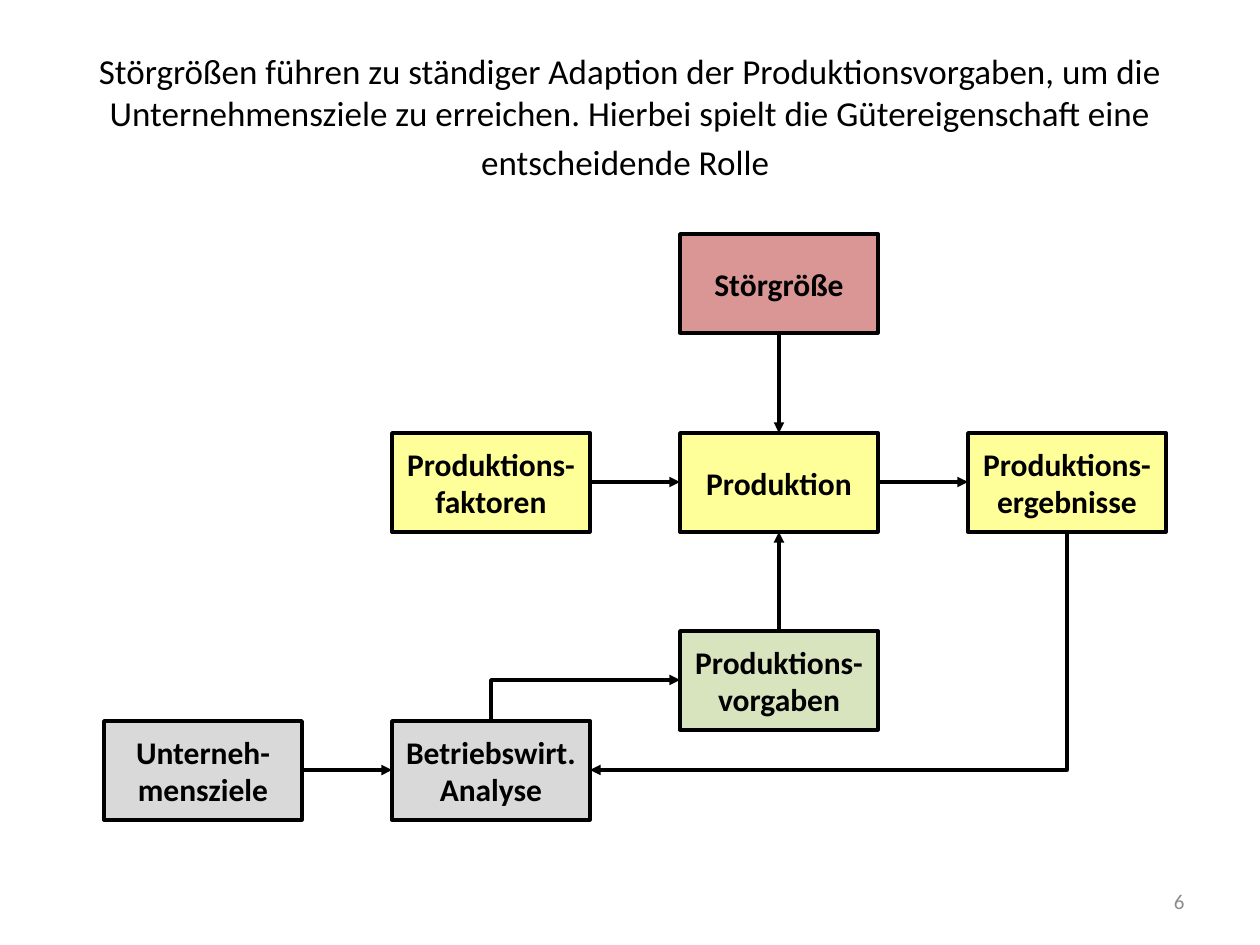
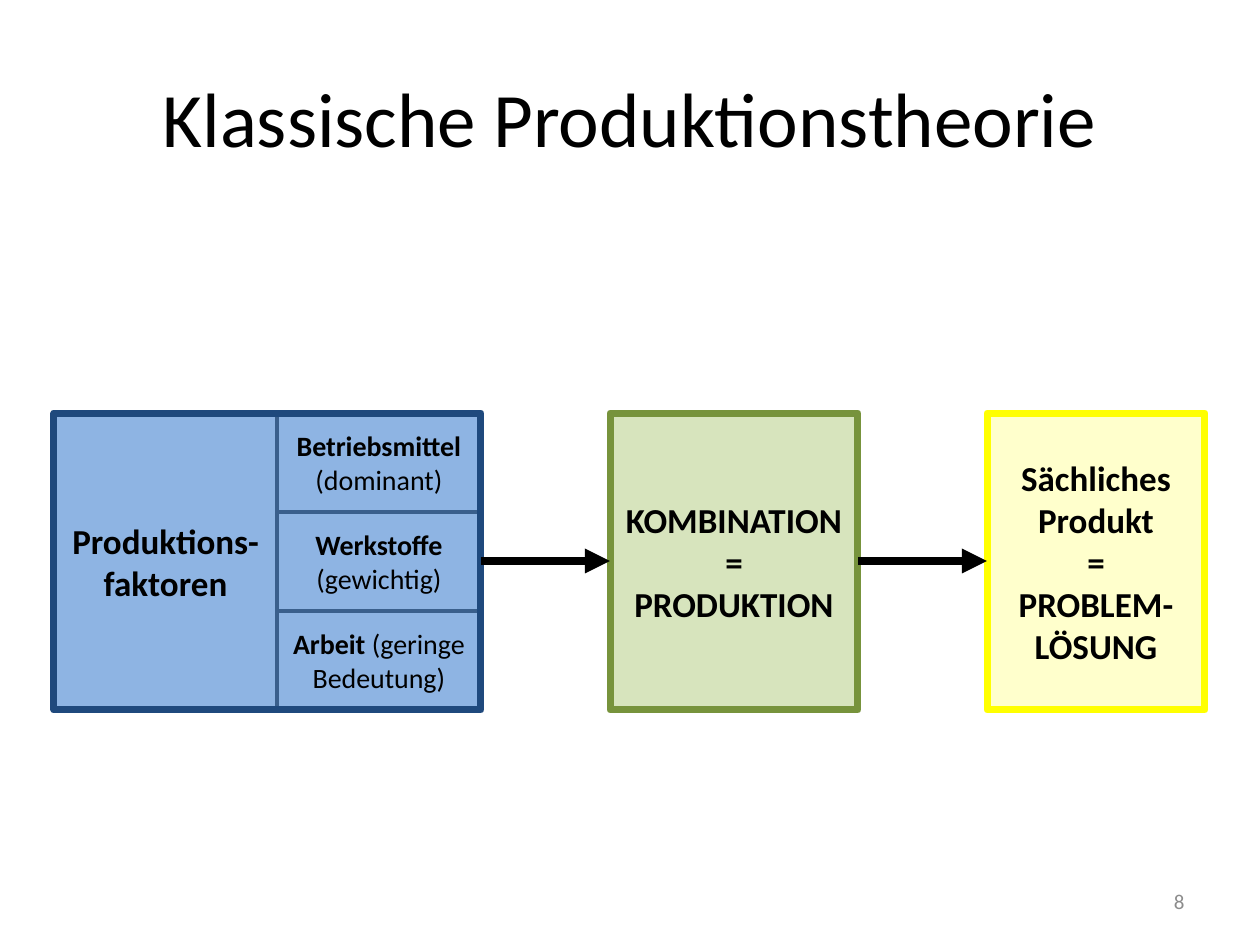
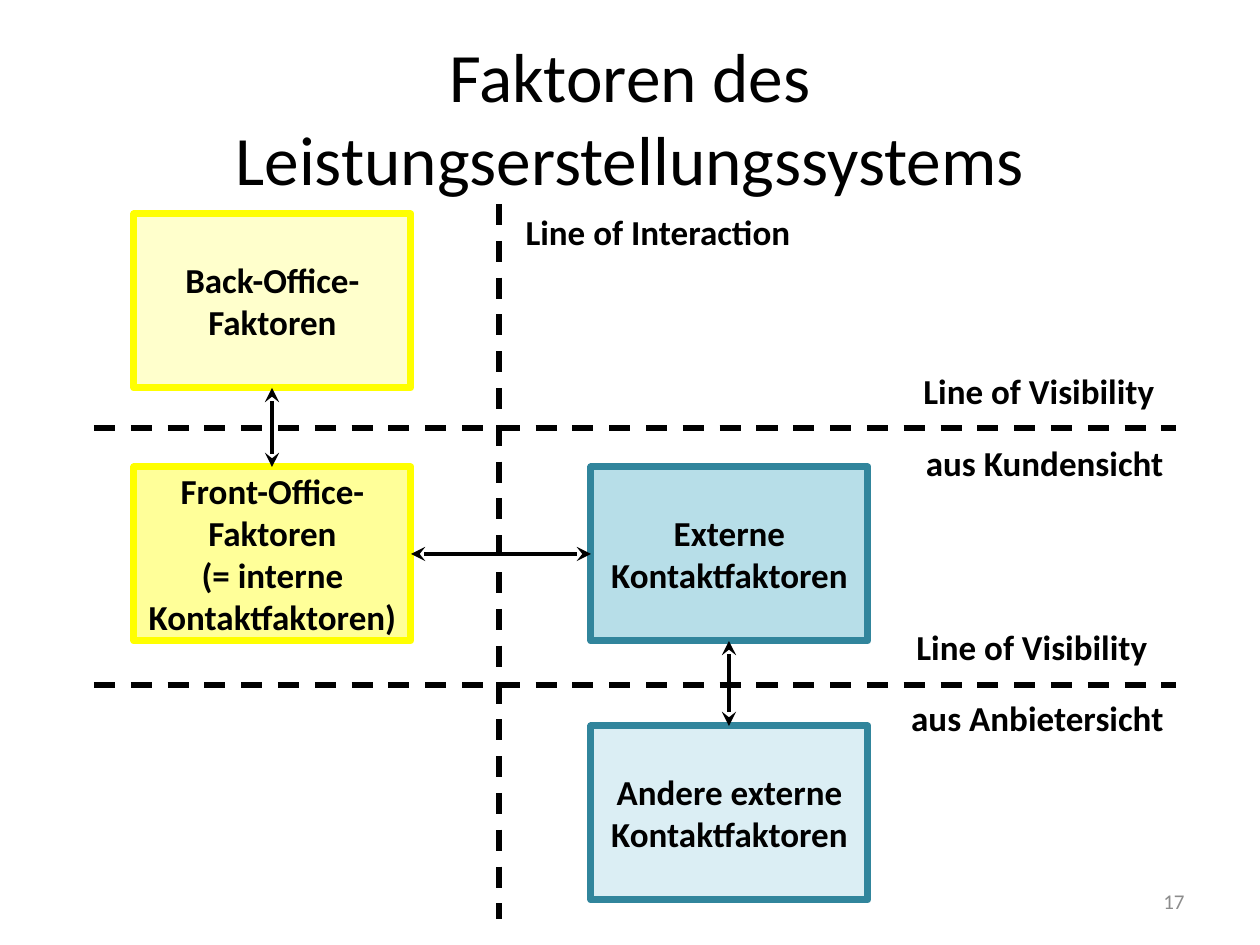
from typing import NamedTuple

from lxml.etree import SubElement
from pptx import Presentation
from pptx.dml.color import RGBColor
from pptx.enum.dml import MSO_LINE_DASH_STYLE as Dash
from pptx.enum.shapes import MSO_CONNECTOR as Link, MSO_SHAPE as Preset
from pptx.enum.text import MSO_ANCHOR as Anchor, MSO_AUTO_SIZE as Fit, PP_ALIGN as Align
from pptx.oxml.ns import qn
from pptx.util import Emu, Pt

PX_PER_INCH = 126
FONT = "Calibri"
COLOURS = {
    "black": "000000", "number": "8C8C8C", "yellow": "FFFF99", "cream": "FFFFCC",
    "bright": "FFFF00", "green": "D7E4BD", "olive": "77933C", "grey": "D9D9D9",
    "rose": "D99694", "blue": "8EB4E3", "steel": "3A5F8C", "navy": "1F497D",
    "aqua": "B7DEE8", "ice": "DBEEF4", "teal": "31859C",
}


class Box(NamedTuple):
    """A rectangle in px."""
    left: int
    top: int
    width: int
    height: int

    @property
    def right(self):
        """Right edge."""
        return self.left + self.width

    @property
    def bottom(self):
        """Bottom edge."""
        return self.top + self.height

    @property
    def mid_x(self):
        """Horizontal centre."""
        return self.left + self.width // 2

    @property
    def mid_y(self):
        """Vertical centre."""
        return self.top + self.height // 2

    def inside(self, x, y, width, height):
        """Return a box placed relative to this one."""
        return Box(self.left + x, self.top + y, width, height)


PAGE = Box(0, 0, 1260, 945)
TITLE = Box(63, 38, 1134, 157)
NUMBER = Box(903, 876, 294, 50)


def px(length):
    """Turn px into EMU."""
    return Emu(round(length * 914400 / PX_PER_INCH))


def rgb(name):
    """Look up a colour by name."""
    return RGBColor.from_string(COLOURS[name])


def apply(target, values):
    """Set every attribute listed in the dict."""
    for key, value in values.items():
        setattr(target, key, value)


def write(shape, lines, size, bold=False, colour="black", align=Align.CENTER, **frame):
    """Fill a shape with lines, each a string or a list of (text, font values) runs."""
    text = shape.text_frame
    apply(text, {"word_wrap": True, "vertical_anchor": Anchor.MIDDLE, **frame})
    for index, line in enumerate(lines):
        paragraph = text.add_paragraph() if index else text.paragraphs[0]
        paragraph.alignment = align
        for words, changes in [(line, {})] if isinstance(line, str) else line:
            run = paragraph.add_run()
            run.text = words
            apply(run.font, {"name": FONT, "size": Pt(size), "bold": bold, **changes})
            run.font.color.rgb = rgb(colour)
    return text


def text_area(slide, box):
    """Add an empty text box."""
    return slide.shapes.add_textbox(*map(px, box))


def node(slide, box, lines, fill, line, weight, size=20):
    """Draw a labelled rectangle and return its box."""
    rectangle = slide.shapes.add_shape(Preset.RECTANGLE, *map(px, box))
    rectangle.shadow.inherit = False
    if fill:
        rectangle.fill.solid()
        rectangle.fill.fore_color.rgb = rgb(fill)
    else:
        rectangle.fill.background()
    rectangle.line.color.rgb = rgb(line)
    rectangle.line.width = Pt(weight)
    write(rectangle, lines, size, bold=True)
    return box


def connect(slide, start, end, weight, head=None, tail=None, dash=None, kind=Link.STRAIGHT):
    """Draw a black line with optional arrowheads and dashes."""
    connector = slide.shapes.add_connector(kind, *map(px, (*start, *end)))
    connector.line.color.rgb = rgb("black")
    apply(connector.line, {"width": Pt(weight), "dash_style": dash})
    properties = connector._element.spPr
    for tag, arrow in (("a:headEnd", head), ("a:tailEnd", tail)):
        if arrow:
            SubElement(properties.find(qn("a:ln")), qn(tag), type=arrow)
    SubElement(properties, qn("a:effectLst"))
    return connector


def connect_corner(slide, start, end, weight, tail):
    """Draw an arrow that runs vertically first, then horizontally."""
    (x1, y1), (x2, y2) = start, end
    mid_x, mid_y = (x1 + x2) / 2, (y1 + y2) / 2
    half_x, half_y = (x2 - x1) / 2, (y2 - y1) / 2
    corner = connect(slide, (mid_x - half_y, mid_y + half_x),
                     (mid_x + half_y, mid_y - half_x), weight, tail=tail, kind=Link.ELBOW)
    properties = corner._element.spPr
    properties.find(qn("a:prstGeom")).set("prst", "bentConnector2")
    properties.find(qn("a:xfrm")).set("rot", "5400000")


def new_slide(deck, title, size, number):
    """Add a blank slide with title and page number."""
    slide = deck.slides.add_slide(deck.slide_layouts[6])
    write(text_area(slide, TITLE), [title], size)
    write(text_area(slide, NUMBER), [str(number)], 12, colour="number", align=Align.RIGHT)
    return slide


def control_loop(slide, area):
    """Draw the production control loop."""
    def step(column, y, label, fill):
        return node(slide, area.inside(column * 288, y, 198, 99), [label], fill, "black", 2, 18)

    disturbance = step(2, 0, "Störgröße", "rose")
    factors = step(1, 199, "Produktions-faktoren", "yellow")
    production = step(2, 199, "Produktion", "yellow")
    results = step(3, 199, "Produktions-ergebnisse", "yellow")
    targets = step(2, 397, "Produktions-vorgaben", "green")
    goals = step(0, 487, "Unterneh-mensziele", "grey")
    analysis = step(1, 487, "Betriebswirt. Analyse", "grey")

    for source, target in ((factors, production), (production, results), (goals, analysis)):
        connect(slide, (source.right, source.mid_y), (target.left, target.mid_y), 2,
                tail="triangle")
    for start, end in ((disturbance.bottom, production.top), (targets.top, production.bottom)):
        connect(slide, (production.mid_x, start), (production.mid_x, end), 2, tail="triangle")
    connect_corner(slide, (results.mid_x, results.bottom),
                   (analysis.right, analysis.mid_y), 2, "triangle")
    connect_corner(slide, (analysis.mid_x, analysis.top),
                   (targets.left, targets.mid_y), 2, "triangle")


def factor_chain(slide, area):
    """Draw the chain from factors through combination to product."""
    plain = {"bold": False}
    node(slide, area.inside(0, 0, 223, area.height), ["Produktions-faktoren"], "blue", "steel", 2)
    kinds = (
        [[("Betriebsmittel", {}), (" (dominant)", plain)]],
        ["Werkstoffe", [("(gewichtig)", plain)]],
        [[("Arbeit", {}), (" (geringe Bedeutung)", plain)]],
    )
    height = area.height // len(kinds)
    for row, lines in enumerate(kinds):
        node(slide, area.inside(223, row * height, 204, height), lines, "blue", "steel", 2, 16)

    factors = node(slide, area.inside(0, 0, 427, area.height), [], None, "navy", 4)
    combination = node(slide, area.inside(556, 0, 248, area.height),
                       ["KOMBINATION", "=", "PRODUKTION"], "green", "olive", 4)
    product = node(slide, area.inside(933, 0, 218, area.height),
                   ["Sächliches", "Produkt", "=", "PROBLEM-LÖSUNG"], "cream", "bright", 4)
    for source, target in ((factors, combination), (combination, product)):
        connect(slide, (source.right, area.mid_y), (target.left, area.mid_y), 4.75,
                tail="triangle")


def service_map(slide, area):
    """Draw the factor map with its interaction and visibility lines."""
    def factor(x, y, lines, fill, line):
        return node(slide, area.inside(x, y, 277, 174), lines, fill, line, 4)

    def caption(x, y, width, height, lines):
        return write(text_area(slide, area.inside(x, y, width, height)), lines, 20, bold=True,
                     word_wrap=False, auto_size=Fit.SHAPE_TO_FIT_TEXT, vertical_anchor=Anchor.TOP)

    back = factor(40, 10, ["Back-Office-Faktoren"], "cream", "bright")
    front = factor(40, 263, ["Front-Office-Faktoren", "(= interne Kontaktfaktoren)"],
                   "yellow", "bright")
    external = factor(497, 263, ["Externe Kontaktfaktoren"], "aqua", "teal")
    other = factor(497, 522, ["Andere externe Kontaktfaktoren"], "ice", "teal")

    interaction = area.left + 405
    connect(slide, (interaction, area.top), (interaction, area.bottom), 3, dash=Dash.DASH)
    caption(418, 0, 292, 55, ["Line of Interaction"])
    visibilities = ((224, 816, 159, "aus Kundensicht"), (481, 802, 415, "aus Anbietersicht"))
    for line_y, x, y, viewpoint in visibilities:
        level = area.top + line_y
        connect(slide, (area.left, level), (area.right, level), 3, dash=Dash.DASH)
        text = caption(x, y, area.width - x, 131, ["Line of Visibility ", viewpoint])
        apply(text.paragraphs[1], {"alignment": Align.RIGHT, "space_before": Pt(17)})

    for start, end in (
        ((back.mid_x, back.bottom), (front.mid_x, front.top)),
        ((external.mid_x, external.bottom), (other.mid_x, other.top)),
        ((front.right, front.mid_y), (external.left, external.mid_y)),
    ):
        connect(slide, start, end, 2.75, head="stealth", tail="stealth")


def main():
    """Build and save the deck."""
    deck = Presentation()
    apply(deck, {"slide_width": px(PAGE.width), "slide_height": px(PAGE.height)})
    adaption = [
        ("Störgrößen führen zu ständiger Adaption der Produktionsvorgaben, um die "
         "Unternehmensziele zu erreichen. Hierbei spielt die Gütereigenschaft eine "
         "entscheidende Rolle", {}),
        (" ", {"size": Pt(24)}),
    ]
    control_loop(new_slide(deck, adaption, 20, 6), Box(104, 234, 1062, 586))
    factor_chain(new_slide(deck, "Klassische Produktionstheorie", 44, 8),
                 Box(54, 413, 1151, 297))
    service_map(new_slide(deck, "Faktoren des Leistungserstellungssystems", 39.6, 17),
                Box(94, 204, 1082, 715))
    deck.save("out.pptx")


if __name__ == "__main__":
    main()
